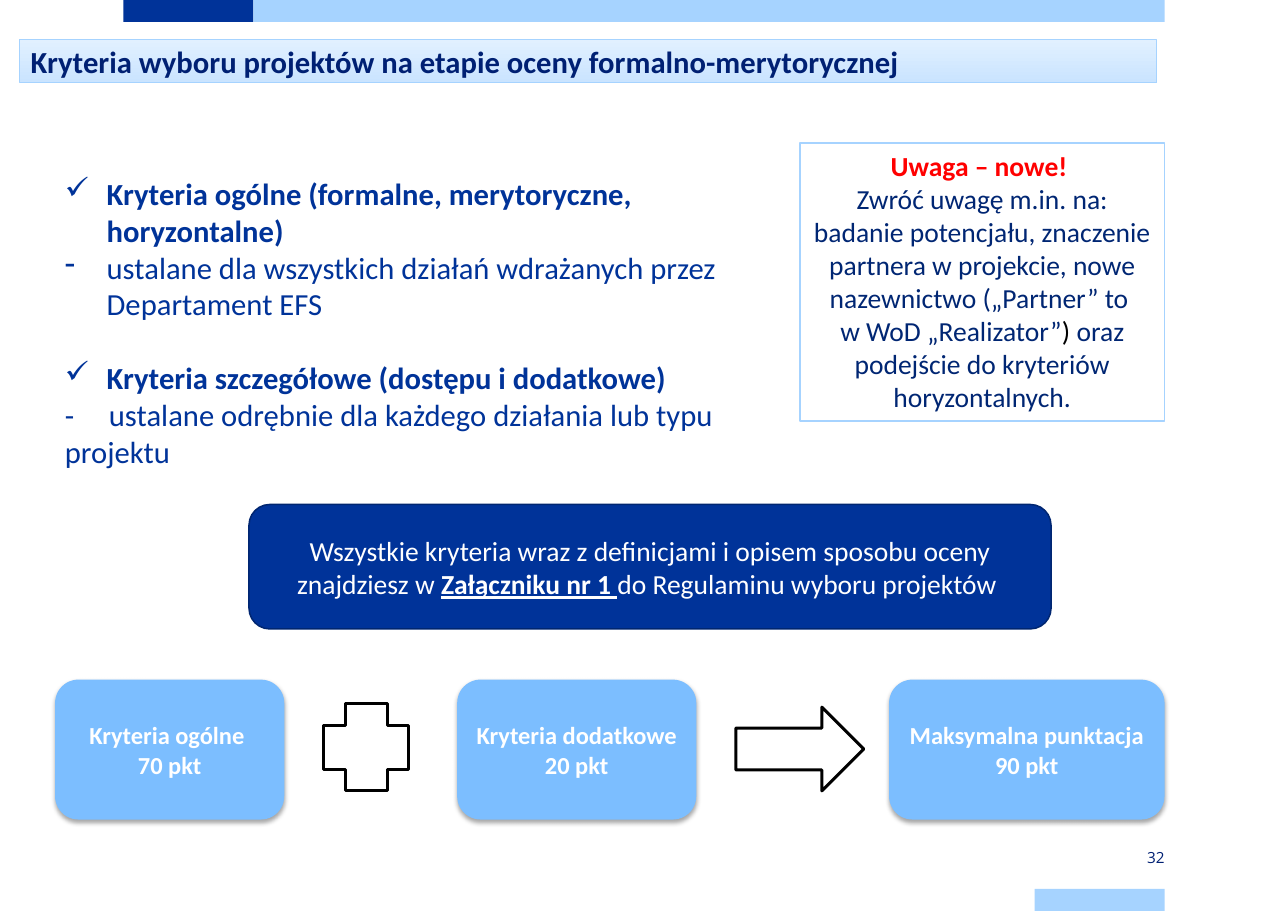
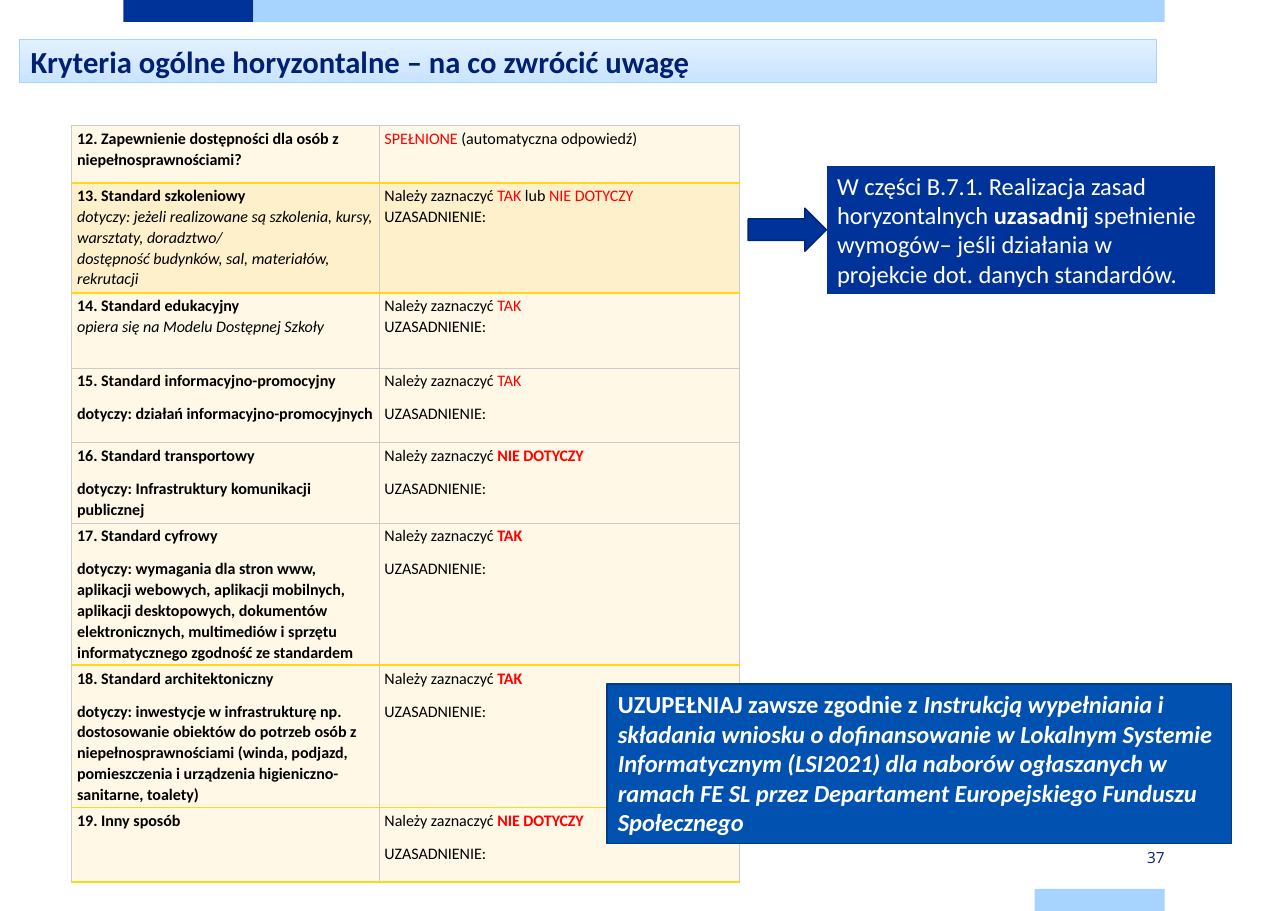
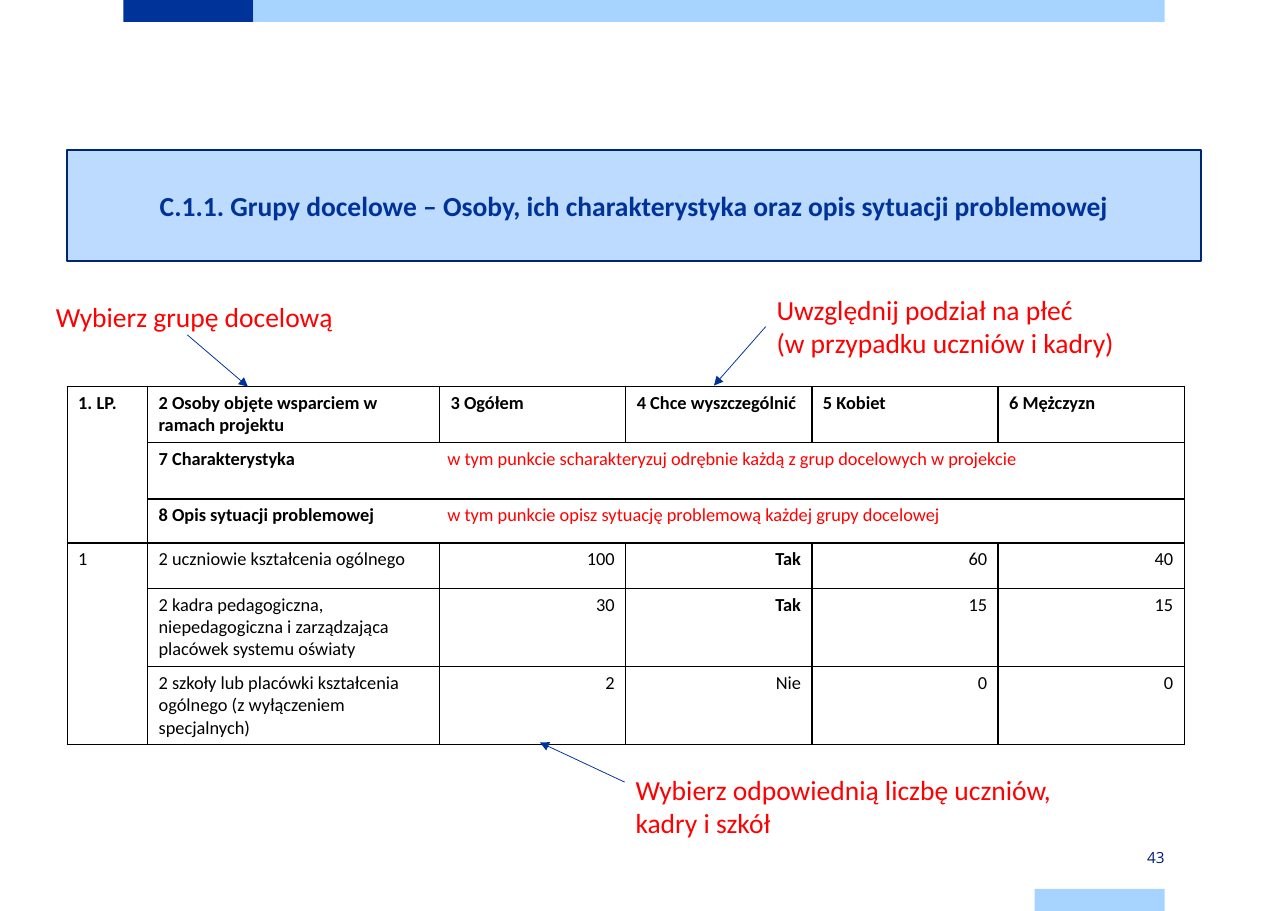
"""Builds three slides on project selection criteria and target groups."""
from lxml import etree
from pptx import Presentation
from pptx.dml.color import RGBColor
from pptx.enum.shapes import MSO_CONNECTOR, MSO_SHAPE
from pptx.enum.text import MSO_ANCHOR, PP_ALIGN
from pptx.oxml.ns import qn
from pptx.util import Inches, Pt

RECT, ROUNDED = MSO_SHAPE.RECTANGLE, MSO_SHAPE.ROUNDED_RECTANGLE
ARROW, PLUS = MSO_SHAPE.RIGHT_ARROW, MSO_SHAPE.CROSS
LEFT, CENTER, RIGHT = PP_ALIGN.LEFT, PP_ALIGN.CENTER, PP_ALIGN.RIGHT
TOP, MIDDLE = MSO_ANCHOR.TOP, MSO_ANCHOR.MIDDLE
STRAIGHT = MSO_CONNECTOR.STRAIGHT
LEFT_SIDE = 1
BODY_FONT, NUMBER_FONT = "Calibri", "Open Sans"

COLORS = {
    "blue": "003399", "edge": "002671", "navy": "002073", "ink": "002673",
    "sky": "A6D3FF", "card": "7CBEFF", "pale": "BCDBFF", "royal": "0051B0",
    "royal_edge": "003C82", "title_top": "E1F0FF", "title_bottom": "CAE4FF",
    "red": "FF0000", "black": "000000", "white": "FFFFFF", "gold": "FFD618",
    "grey": "CCCCCC", "cream": "FFF8E7", "cream_dark": "FFF0CC",
}

BANDS = [
    (1.12, 0, 1.18, 0.2, "blue"),
    (2.3, 0, 8.27, 0.2, "sky"),
    (9.39, 8.07, 1.18, 0.2, "sky"),
]

CRITERIA_TITLE = "Kryteria wyboru projektów na etapie oceny formalno-merytorycznej"
CRITERIA = [
    ("✓", 0, ("Kryteria ogólne (formalne, merytoryczne, horyzontalne)", "b")),
    ("-", 0, "ustalane dla wszystkich działań wdrażanych przez Departament EFS"),
    ("✓", 24.4, ("Kryteria szczegółowe (dostępu i dodatkowe)", "b")),
    (None, 0, "-\tustalane odrębnie dla każdego działania lub typu projektu"),
]
NOTICE = [
    [("Uwaga – nowe! ", "b red")],
    ["Zwróć uwagę m.in. na: badanie potencjału, znaczenie partnera w projekcie, "
     "nowe nazewnictwo („Partner” to "],
    ["w WoD „Realizator”", (") ", "black"), "oraz podejście do kryteriów horyzontalnych."],
]
ANNEX = [["Wszystkie kryteria wraz z definicjami i opisem sposobu oceny znajdziesz w ",
          ("Załączniku nr 1 ", "b u"), "do Regulaminu wyboru projektów "]]
SCORES = [
    (0.5, 2.08, "Kryteria ogólne ", "70 pkt"),
    (4.15, 2.17, "Kryteria dodatkowe", "20 pkt"),
    (8.07, 2.5, "Maksymalna punktacja", "90 pkt"),
]
OPERATORS = [(PLUS, 2.94, 6.39, 0.77, 0.79), (ARROW, 6.68, 6.42, 1.16, 0.76)]

STANDARDS_TITLE = "Kryteria ogólne horyzontalne – na co zwrócić uwagę"
MARK, REASON = "Należy zaznaczyć ", ["UZASADNIENIE:"]
STANDARDS = [
    (0.52, [[("12. Zapewnienie dostępności dla osób z niepełnosprawnościami?", "b")]],
     [[("SPEŁNIONE ", "red"), "(automatyczna odpowiedź)"]]),
    (1, [[("13. Standard szkoleniowy", "b")],
         [("dotyczy: jeżeli realizowane są szkolenia, kursy, warsztaty, doradztwo/", "i")],
         [("dostępność budynków, sal, materiałów, rekrutacji", "i")]],
     [[MARK, ("TAK ", "red"), "lub ", ("NIE DOTYCZY", "red")], REASON]),
    (0.68, [[("14. Standard edukacyjny", "b")],
            [("opiera się na Modelu Dostępnej Szkoły", "i")]],
     [[MARK, ("TAK", "red")], REASON]),
    (0.68, [[("15. Standard informacyjno-promocyjny", "b")],
            [("dotyczy: działań informacyjno-promocyjnych", "b")]],
     [[MARK, ("TAK", "red")], REASON]),
    (0.73, [[("16. Standard transportowy", "b")],
            [("dotyczy: Infrastruktury komunikacji publicznej", "b")]],
     [[MARK, ("NIE DOTYCZY", "b red")], REASON]),
    (1.29, [[("17. Standard cyfrowy", "b")],
            [("dotyczy: wymagania dla stron www, aplikacji webowych, aplikacji mobilnych, "
              "aplikacji desktopowych, dokumentów elektronicznych, multimediów i sprzętu "
              "informatycznego zgodność ze standardem", "b")]],
     [[MARK, ("TAK", "b red")], REASON]),
    (1.29, [[("18. Standard architektoniczny", "b")],
            [("dotyczy: inwestycje w infrastrukturę np. dostosowanie obiektów do potrzeb osób "
              "z niepełnosprawnościami (winda, podjazd, pomieszczenia i urządzenia "
              "higieniczno-sanitarne, toalety)", "b")]],
     [[MARK, ("TAK", "b red")], REASON]),
    (0.68, [[("19. Inny sposób", "b")]], [[MARK, ("NIE DOTYCZY", "b red")], REASON]),
]
SHADED_ROW, FIRST_SPACED_ROW = 1, 3
GOLD_BELOW = {0: 1.5, 1: 1, 5: 1.5, 6: 1, 7: 1.5}
JUSTIFY = [["W części B.7.1. Realizacja zasad horyzontalnych ", ("uzasadnij ", "b"),
            "spełnienie wymogów– jeśli działania w projekcie dot. danych standardów."]]
FILL_IN = [[("UZUPEŁNIAJ zawsze zgodnie z ", "b"),
            ("Instrukcją wypełniania i składania wniosku o dofinansowanie w Lokalnym Systemie "
             "Informatycznym (LSI2021) dla naborów ogłaszanych w ramach FE SL przez Departament "
             "Europejskiego Funduszu Społecznego", "b i")]]

GROUPS_TITLE = "C.1.1. Grupy docelowe – Osoby, ich charakterystyka oraz opis sytuacji problemowej"
GROUP_WIDTHS = [0.73, 2.65] + [1.69] * 4
GROUP_HEIGHTS = [0.51, 0.51, 0.4, 0.41, 0.71, 0.71]
GROUP_HEADS = ["1. LP.", "2 Osoby objęte wsparciem w ramach projektu", "3 Ogółem",
               "4 Chce wyszczególnić", "5 Kobiet", "6 Mężczyzn"]
GROUP_NOTES = [
    ("7 Charakterystyka\t",
     "w tym punkcie scharakteryzuj odrębnie każdą z grup docelowych w projekcie"),
    ("8 Opis sytuacji problemowej\t",
     "w tym punkcie opisz sytuację problemową każdej grupy docelowej"),
]
GROUPS = [
    ("1", "2 uczniowie kształcenia ogólnego", "100", "Tak", "60", "40"),
    ("", "2 kadra pedagogiczna, niepedagogiczna i zarządzająca placówek systemu oświaty",
     "30", "Tak", "15", "15"),
    ("", "2 szkoły lub placówki kształcenia ogólnego (z wyłączeniem specjalnych)",
     "2", "Nie", "0", "0"),
]
HINTS = [
    (0.41, 2.67, 2.91, 0.4, [["Wybierz grupę docelową"]], (1.7, 3.04), (2.25, 3.51)),
    (6.95, 2.61, 3.46, 0.71,
     [["Uwzględnij podział na płeć"], ["(w przypadku uczniów i kadry)"]], None, (6.48, 3.5)),
    (5.67, 6.97, 3.97, 0.71,
     [["Wybierz odpowiednią liczbę uczniów, kadry i szkół"]], (5.67, 7.1), (4.9, 6.74)),
]


def rgb(name):
    return RGBColor.from_string(COLORS[name])


def write(frame, paragraphs, size, color="black", align=LEFT, font=BODY_FONT):
    frame.word_wrap = True
    for index, spans in enumerate(paragraphs):
        para = frame.add_paragraph() if index else frame.paragraphs[0]
        para.alignment = align
        for item in spans:
            words, style = (item, "") if isinstance(item, str) else item
            flags = style.split()
            span = para.add_run()
            span.text = words
            span.font.name, span.font.size = font, Pt(size)
            span.font.bold, span.font.italic = "b" in flags, "i" in flags
            span.font.underline = "u" in flags
            span.font.color.rgb = rgb(next((flag for flag in flags if flag in COLORS), color))


def add_text(page, place, paragraphs, size, color, **options):
    box = page.shapes.add_textbox(*map(Inches, place))
    write(box.text_frame, paragraphs, size, color, **options)
    return box


def add_block(page, kind, place, fill, line=None, width=1):
    block = page.shapes.add_shape(kind, *map(Inches, place))
    block.shadow.inherit = False
    block.fill.solid()
    block.fill.fore_color.rgb = rgb(fill)
    if line:
        block.line.color.rgb = rgb(line)
        block.line.width = Pt(width)
    else:
        block.line.fill.background()
    return block


def add_panel(page, kind, place, fill, line, paragraphs, size, color="white",
              align=CENTER, anchor=MIDDLE, width=1):
    panel = add_block(page, kind, place, fill, line, width)
    panel.text_frame.vertical_anchor = anchor
    write(panel.text_frame, paragraphs, size, color, align)
    return panel


def add_shadow(shape):
    effects = shape._element.spPr.find(qn("a:effectLst"))
    shadow = etree.SubElement(effects, qn("a:outerShdw"), blurRad="40000", dist="23000",
                              dir="5400000", rotWithShape="0")
    tint = etree.SubElement(shadow, qn("a:srgbClr"), val=COLORS["black"])
    etree.SubElement(tint, qn("a:alpha"), val="35000")


def add_tab(para, inches):
    stops = etree.SubElement(para._p.get_or_add_pPr(), qn("a:tabLst"))
    etree.SubElement(stops, qn("a:tab"), pos=str(Inches(inches)), algn="l")


def add_pointer(page, start, end):
    pointer = page.shapes.add_connector(STRAIGHT, *map(Inches, start + end))
    pointer.line.color.rgb = rgb("blue")
    pointer.line.width = Pt(0.5)
    etree.SubElement(pointer.line._get_or_add_ln(), qn("a:tailEnd"), type="triangle")
    etree.SubElement(pointer._element.spPr, qn("a:effectLst"))
    return pointer


def add_grid(page, left, top, widths, heights):
    frame = page.shapes.add_table(len(heights), len(widths), Inches(left), Inches(top),
                                  Inches(sum(widths)), Inches(sum(heights)))
    grid = frame.table
    grid.first_row = grid.horz_banding = False
    for column, width in zip(grid.columns, widths):
        column.width = Inches(width)
    for row, height in zip(grid.rows, heights):
        row.height = Inches(height)
    return grid


def style_cell(cell, fill, borders):
    properties = cell._tc.get_or_add_tcPr()
    for side, (color, width) in zip("LRTB", borders):
        line = etree.SubElement(properties, qn(f"a:ln{side}"), w=str(Pt(width)))
        paint = etree.SubElement(line, qn("a:solidFill"))
        etree.SubElement(paint, qn("a:srgbClr"), val=COLORS[color])
    cell.fill.solid()
    cell.fill.fore_color.rgb = rgb(fill)


def start_page(deck, number, title=None):
    page = deck.slides.add_slide(deck.slide_layouts[6])
    for *place, color in BANDS:
        add_block(page, RECT, place, color)
    footer = add_text(page, (9.39, 7.68, 1.18, 0.2), [[number]], 10, "navy",
                      align=RIGHT, font=NUMBER_FONT).text_frame
    footer.margin_left = footer.margin_right = 0
    footer.margin_top = footer.margin_bottom = Inches(0.08)
    footer.vertical_anchor = MIDDLE
    if title:
        bar = add_panel(page, RECT, (0.18, 0.36, 10.32, 0.39), "title_top", "sky",
                        [[(title, "b")]], 20, "navy", LEFT, width=0.5)
        bar.fill.gradient()
        bar.fill.gradient_angle = 270
        for stop, color in zip(bar.fill.gradient_stops, ("title_top", "title_bottom")):
            stop.color.rgb = rgb(color)
    return page


def build_criteria(deck):
    page = start_page(deck, "32", CRITERIA_TITLE)
    listing = add_text(page, (0.49, 1.54, 6.77, 3.13), [[item[2]] for item in CRITERIA],
                       20, "blue")
    for para, (bullet, gap, _) in zip(listing.text_frame.paragraphs, CRITERIA):
        if bullet:
            properties = para._p.get_or_add_pPr()
            properties.set("marL", str(Inches(0.38)))
            properties.set("indent", str(-Inches(0.38)))
            etree.SubElement(properties, qn("a:buChar"), char=bullet)
        else:
            add_tab(para, 0.4)
        if gap:
            para.space_before = Pt(gap)
    add_panel(page, RECT, (7.26, 1.3, 3.31, 2.52), "white", "sky", NOTICE, 18, "ink", anchor=TOP)
    add_panel(page, ROUNDED, (2.26, 4.58, 7.28, 1.13), "blue", "edge", ANNEX, 18)
    for left, width, label, points in SCORES:
        card = add_panel(page, ROUNDED, (left, 6.17, width, 1.27), "card", None,
                         [[(label, "b")], [(points, "b")]], 16)
        add_shadow(card)
    for kind, *place in OPERATORS:
        add_block(page, kind, place, "white", "black", 2)


def build_standards(deck):
    page = start_page(deck, "37", STANDARDS_TITLE)
    grid = add_grid(page, 0.65, 1.14, [2.79, 3.27], [row[0] for row in STANDARDS])
    thin = ("grey", 0.5)
    edges = [thin] + [("gold", GOLD_BELOW[row]) if row in GOLD_BELOW else thin
                      for row in range(len(STANDARDS))]
    for row, (_, *texts) in enumerate(STANDARDS):
        for column, paragraphs in enumerate(texts):
            cell = grid.cell(row, column)
            style_cell(cell, "cream_dark" if row == SHADED_ROW else "cream",
                       [thin, thin, edges[row], edges[row + 1]])
            cell.margin_left = cell.margin_right = Inches(0.05)
            cell.margin_top = cell.margin_bottom = Inches(0.02)
            write(cell.text_frame, paragraphs, 10.5)
            for para in cell.text_frame.paragraphs:
                para.line_spacing = 1.07
                para.space_after = Pt(8 if row >= FIRST_SPACED_ROW else 0)
    add_panel(page, RECT, (7.5, 1.5, 3.54, 1.18), "blue", "white", JUSTIFY, 16,
              align=LEFT, anchor=TOP, width=1.5)
    add_block(page, ARROW, (6.79, 1.89, 0.71, 0.39), "blue", "edge")
    add_panel(page, RECT, (5.51, 6.21, 5.67, 1.45), "royal", "royal_edge", FILL_IN, 16,
              align=LEFT, anchor=TOP)


def build_groups(deck):
    page = start_page(deck, "43")
    add_panel(page, RECT, (0.61, 1.36, 10.29, 1.01), "pale", "edge",
              [[(GROUPS_TITLE, "b")]], 18, "blue")
    grid = add_grid(page, 0.61, 3.51, GROUP_WIDTHS, GROUP_HEIGHTS)
    for cell in grid.iter_cells():
        style_cell(cell, "white", [("black", 1)] * 4)
    for column, head in enumerate(GROUP_HEADS):
        write(grid.cell(0, column).text_frame, [[(head, "b")]], 12)
    for row, (label, note) in enumerate(GROUP_NOTES, 1):
        cell = grid.cell(row, 1)
        cell.merge(grid.cell(row, 5))
        add_tab(cell.text_frame.paragraphs[0], 2.62)
        write(cell.text_frame, [[(label, "b"), (note, "red")]], 12)
    for row, values in enumerate(GROUPS, 3):
        for column, value in enumerate(values):
            if value:
                write(grid.cell(row, column).text_frame,
                      [[(value, "b" if value == "Tak" else "")]], 12,
                      align=RIGHT if column > 1 else LEFT)
    for first in (0, 3):
        grid.cell(first, 0).merge(grid.cell(first + 2, 0))
    for *place, paragraphs, start, end in HINTS:
        hint = add_text(page, place, paragraphs, 18, "red")
        left, top, _, height = place
        pointer = add_pointer(page, start or (left, top + height / 2), end)
        if not start:
            pointer.begin_connect(hint, LEFT_SIDE)


def main():
    deck = Presentation()
    deck.slide_width, deck.slide_height = Inches(11.69), Inches(8.27)
    build_criteria(deck)
    build_standards(deck)
    build_groups(deck)
    deck.save("out.pptx")


if __name__ == "__main__":
    main()
